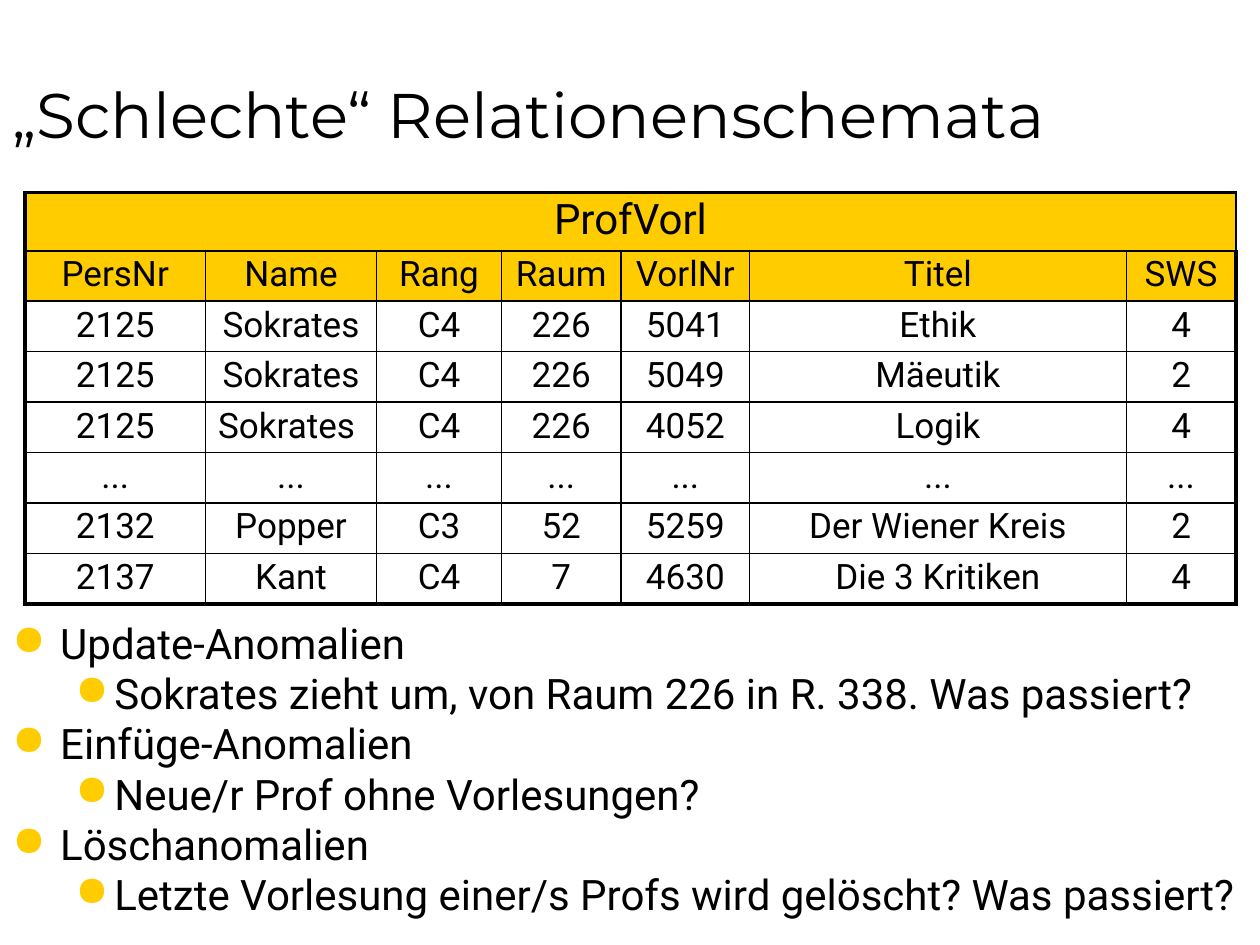
from lxml import etree
from pptx import Presentation
from pptx.dml.color import RGBColor
from pptx.enum.text import MSO_ANCHOR, PP_ALIGN
from pptx.oxml.ns import qn
from pptx.util import Inches, Pt

BOTTOM, CENTER = MSO_ANCHOR.BOTTOM, PP_ALIGN.CENTER
GOLD, BLACK = "FFCC00", "000000"
THIN, THICK = Pt(1), Pt(2.25)

HEADS = ["PersNr", "Name", "Rang", "Raum", "VorlNr", "Titel", "SWS"]
DATA = [
    ["2125", "Sokrates", "C4", "226", "5041", "Ethik", "4"],
    ["2125", "Sokrates", "C4", "226", "5049", "Mäeutik", "2"],
    ["2125", "Sokrates ", "C4", "226", "4052", "Logik", "4"],
    ["..."] * len(HEADS),
    ["2132", "Popper", "C3", "52", "5259", "Der Wiener Kreis", "2"],
    ["2137", "Kant", "C4", "7", "4630", "Die 3 Kritiken", "4"],
]
GRID = [["ProfVorl"] + [""] * (len(HEADS) - 1), HEADS] + DATA
WIDTHS = [1.43, 1.36, 0.99, 0.95, 1.02, 2.99, 0.87]
TOPICS = [
    ("Update-Anomalien", "Sokrates zieht um, von Raum 226 in R. 338. Was passiert?"),
    ("Einfüge-Anomalien", "Neue/r Prof ohne Vorlesungen?"),
    ("Löschanomalien", "Letzte Vorlesung einer/s Profs wird gelöscht? Was passiert?"),
]


def style(para, size, face="Roboto"):
    """Format every run of a paragraph."""
    for run in para.runs:
        run.font.size = Pt(size)
        run.font.name = face
        run.font.color.rgb = RGBColor.from_string(BLACK)


def add_color(parent, color):
    etree.SubElement(parent, qn("a:srgbClr"), val=color)


prs = Presentation()
prs.slide_width, prs.slide_height = Inches(10), Inches(7.5)
W, H = prs.slide_width, prs.slide_height
slide = prs.slides.add_slide(prs.slide_layouts[6])

# Title
frame = slide.shapes.add_textbox(0, 0, W, H // 6).text_frame
frame.word_wrap = True
frame.vertical_anchor = BOTTOM
frame.text = "„Schlechte“ Relationenschemata"
style(frame.paragraphs[0], 36, "Montserrat")

# Bullets
top = Inches(4.93)
frame = slide.shapes.add_textbox(0, top, W, H - top).text_frame
frame.word_wrap = True
lines = [(level, text) for topic in TOPICS for level, text in enumerate(topic)]
for i, (level, text) in enumerate(lines):
    para = frame.add_paragraph() if i else frame.paragraphs[0]
    para.text = text
    para.level = level
    para.line_spacing = 0.8
    para.space_before = Pt(5.6)
    style(para, 24)
    left, hang = [(0.38, 0.38), (0.81, 0.31)][level]
    props = para._p.get_or_add_pPr()
    props.set("marL", str(Inches(left)))
    props.set("indent", str(-Inches(hang)))
    add_color(etree.SubElement(props, qn("a:buClr")), GOLD)
    etree.SubElement(props, qn("a:buChar"), char="●")

# Table
rows, cols = len(GRID), len(HEADS)
table = slide.shapes.add_table(
    rows, cols, Inches(0.2), Inches(1.53), Inches(sum(WIDTHS)), Inches(3.2)
).table
table.first_row = table.horz_banding = False
for col, width in zip(table.columns, WIDTHS):
    col.width = Inches(width)
for r, row in enumerate(table.rows):
    row.height = Inches(0.39 if r else 0.45)
    for c, cell in enumerate(row.cells):
        cell.text = GRID[r][c]
        para = cell.text_frame.paragraphs[0]
        para.alignment = CENTER
        para.line_spacing = 0.9
        style(para, 20 if r else 24)
        if r < 2:
            cell.fill.solid()
            cell.fill.fore_color.rgb = RGBColor.from_string(GOLD)
        else:
            cell.fill.background()
        outer = {"L": c == 0, "R": c == cols - 1, "T": r == 0, "B": r == rows - 1}
        props = cell._tc.get_or_add_tcPr()
        for i, (side, edge) in enumerate(outer.items()):
            line = etree.Element(qn("a:ln" + side), w=str(THICK if edge else THIN))
            add_color(etree.SubElement(line, qn("a:solidFill")), BLACK)
            props.insert(i, line)
table.cell(0, 0).merge(table.cell(0, cols - 1))

prs.save("out.pptx")
